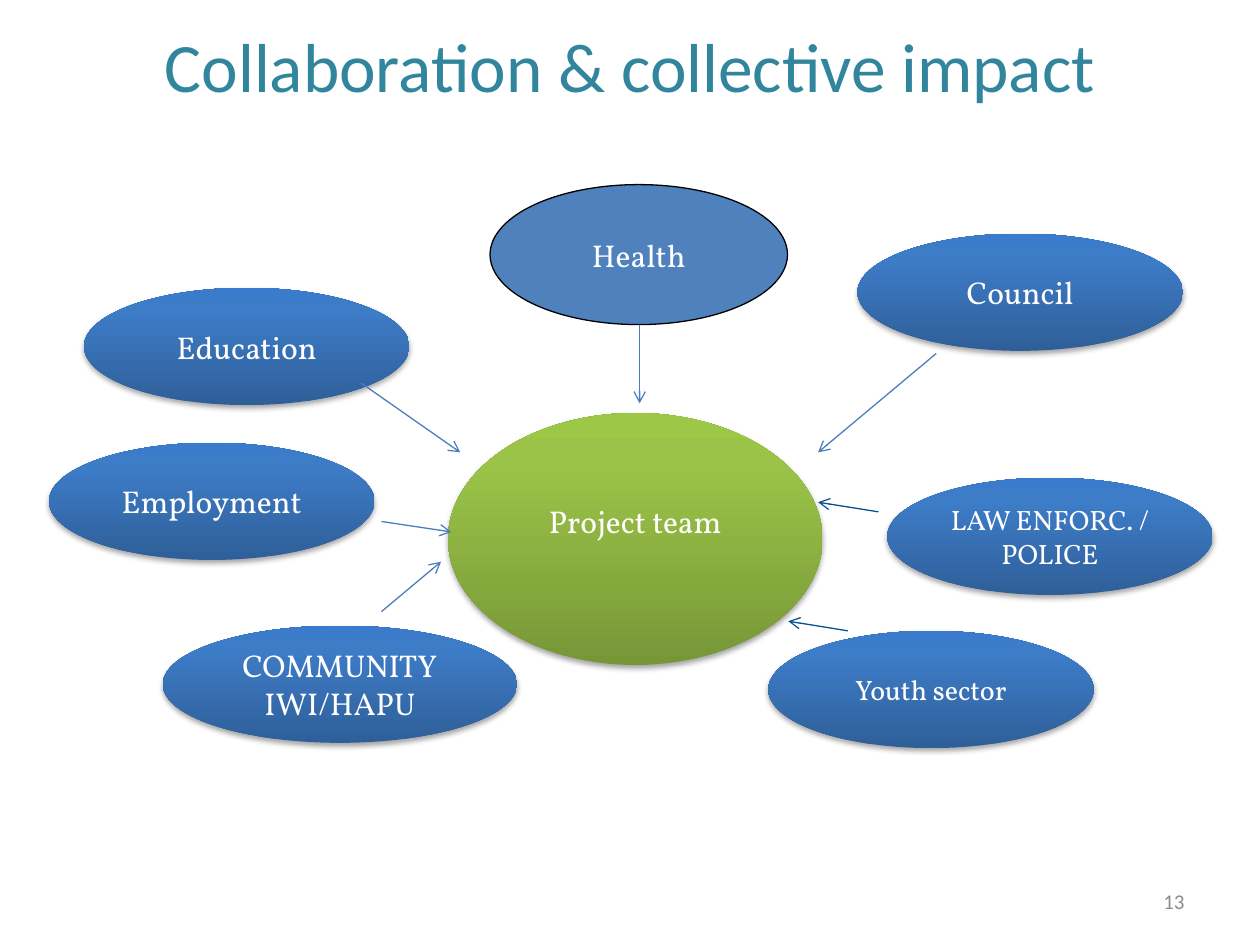
"""Build the collaboration slide: sector ellipses pointing at a project team."""
from lxml.etree import SubElement
from pptx import Presentation
from pptx.dml.color import RGBColor
from pptx.enum.shapes import MSO_CONNECTOR as CONN, MSO_SHAPE as SHAPE
from pptx.enum.text import MSO_ANCHOR as ANCHOR, MSO_AUTO_SIZE as AUTO, PP_ALIGN as ALIGN
from pptx.oxml.ns import qn
from pptx.util import Pt

WHITE = RGBColor(0xFF, 0xFF, 0xFF)
BLACK = RGBColor(0x00, 0x00, 0x00)
TEAL = RGBColor(0x31, 0x85, 0x9C)
GREY = RGBColor(0x8C, 0x8C, 0x8C)
FLAT_BLUE = RGBColor(0x4F, 0x81, 0xBD)
ARROW_BLUE = RGBColor(0x4B, 0x7E, 0xBC)
ARROW_NAVY = RGBColor(0x06, 0x50, 0x93)
BLUES = [RGBColor(0x2F, 0x5F, 0x99), RGBColor(0x3D, 0x7C, 0xC7), RGBColor(0x3A, 0x7C, 0xCB)]
GREENS = [RGBColor(0x77, 0x97, 0x37), RGBColor(0x9B, 0xC3, 0x48), RGBColor(0x9D, 0xC7, 0x46)]
STOPS = [0, 80, 100]


class Deck:
    def __init__(self):
        self.prs = Presentation()
        self.prs.slide_width, self.prs.slide_height = Pt(720), Pt(540)
        self.s = self.prs.slides.add_slide(self.prs.slide_layouts[5])
        self.head, self.body = "Calibri", "Vollkorn"

    def add_lines(self, tf, lines, size, font, color, align=ALIGN.CENTER):
        for i, line in enumerate(lines):
            p = tf.paragraphs[0] if i == 0 else tf.add_paragraph()
            p.alignment = align
            r = p.add_run()
            r.text = line
            r.font.size, r.font.name = Pt(size), font
            r.font.color.rgb = color

    def title(self, text, box):
        sp = self.s.shapes.title
        sp.left, sp.top, sp.width, sp.height = map(Pt, box)
        tf = sp.text_frame
        tf.auto_size, tf.vertical_anchor = AUTO.NONE, ANCHOR.BOTTOM
        tf.margin_left = tf.margin_right = 0
        tf.margin_bottom = Pt(35)
        self.add_lines(tf, [text], 39.6, self.head, TEAL)

    def ellipse(self, lines, box, size=18):
        sp = self.s.shapes.add_shape(SHAPE.OVAL, *map(Pt, box))
        sp.shadow.inherit = False
        sp.text_frame.vertical_anchor = ANCHOR.MIDDLE
        self.add_lines(sp.text_frame, lines, size, self.body, WHITE)
        return sp

    def flat(self, lines, box):
        sp = self.ellipse(lines, box)
        sp.text_frame.word_wrap = False
        sp.fill.solid()
        sp.fill.fore_color.rgb = FLAT_BLUE
        sp.line.color.rgb, sp.line.width = BLACK, Pt(0.75)

    def glossy(self, lines, box, size=18, colors=BLUES):
        sp = self.ellipse(lines, box, size)
        sp.line.fill.background()
        sp.fill.gradient()
        sp.fill.gradient_angle = 90
        pr = sp._element.spPr
        stops = pr.find(".//" + qn("a:gsLst"))
        for old in list(stops):
            stops.remove(old)
        for pos, color in zip(STOPS, colors):
            gs = SubElement(stops, qn("a:gs"), pos=str(pos * 1000))
            SubElement(gs, qn("a:srgbClr"), val=str(color))
        shadow = SubElement(pr.find(qn("a:effectLst")), qn("a:outerShdw"), blurRad=str(Pt(3.1)),
                            dist=str(Pt(1.8)), dir="5400000", rotWithShape="0")
        SubElement(SubElement(shadow, qn("a:srgbClr"), val=str(BLACK)), qn("a:alpha"), val="35000")
        return sp

    def arrow(self, ends, color=ARROW_BLUE):
        c = self.s.shapes.add_connector(CONN.STRAIGHT, *map(Pt, ends))
        c.line.color.rgb, c.line.width = color, Pt(0.75)
        pr = c._element.spPr
        SubElement(pr.find(qn("a:ln")), qn("a:tailEnd"), type="arrow")
        SubElement(pr, qn("a:effectLst"))

    def number(self, text, box):
        tf = self.s.shapes.add_textbox(*map(Pt, box)).text_frame
        tf.word_wrap, tf.vertical_anchor = True, ANCHOR.MIDDLE
        self.add_lines(tf, [text], 12, self.head, GREY, ALIGN.RIGHT)


def main():
    d = Deck()
    d.title("Collaboration & collective impact", (36, 0, 648, 96))
    team = d.glossy(["Project team"], (256, 236, 214, 144), colors=GREENS)
    team.text_frame.margin_bottom = Pt(24)
    d.flat(["Health"], (280, 105.5, 170, 80))
    w, h = 186, 67
    for lines, box, size in [
        (["Education"], (48, 164.5, w, h), 18),
        (["COMMUNITY", "IWI/HAPU"], (93, 357.5, 202.5, h), 18),
        (["LAW ENFORC. / POLICE"], (507, 273, w, h), 16),
        (["Council"], (490, 133.5, w, h), 18),
        (["Youth sector"], (439, 360.5, w, h), 16),
        (["Employment"], (28, 253, w, h), 18),
    ]:
        d.glossy(lines, box, size)
    for ends in [
        (206.5, 219, 263, 258.5),
        (535, 202, 467.5, 258.5),
        (365.5, 185.5, 365.5, 230.5),
        (218, 349.5, 252, 321),
        (218, 298, 258, 304),
    ]:
        d.arrow(ends)
    for ends in [(502, 292.5, 467.5, 287), (484.5, 360.5, 450.5, 355)]:
        d.arrow(ends, ARROW_NAVY)
    d.number("13", (516, 500.5, 168, 29))
    d.prs.save("out.pptx")


if __name__ == "__main__":
    main()
